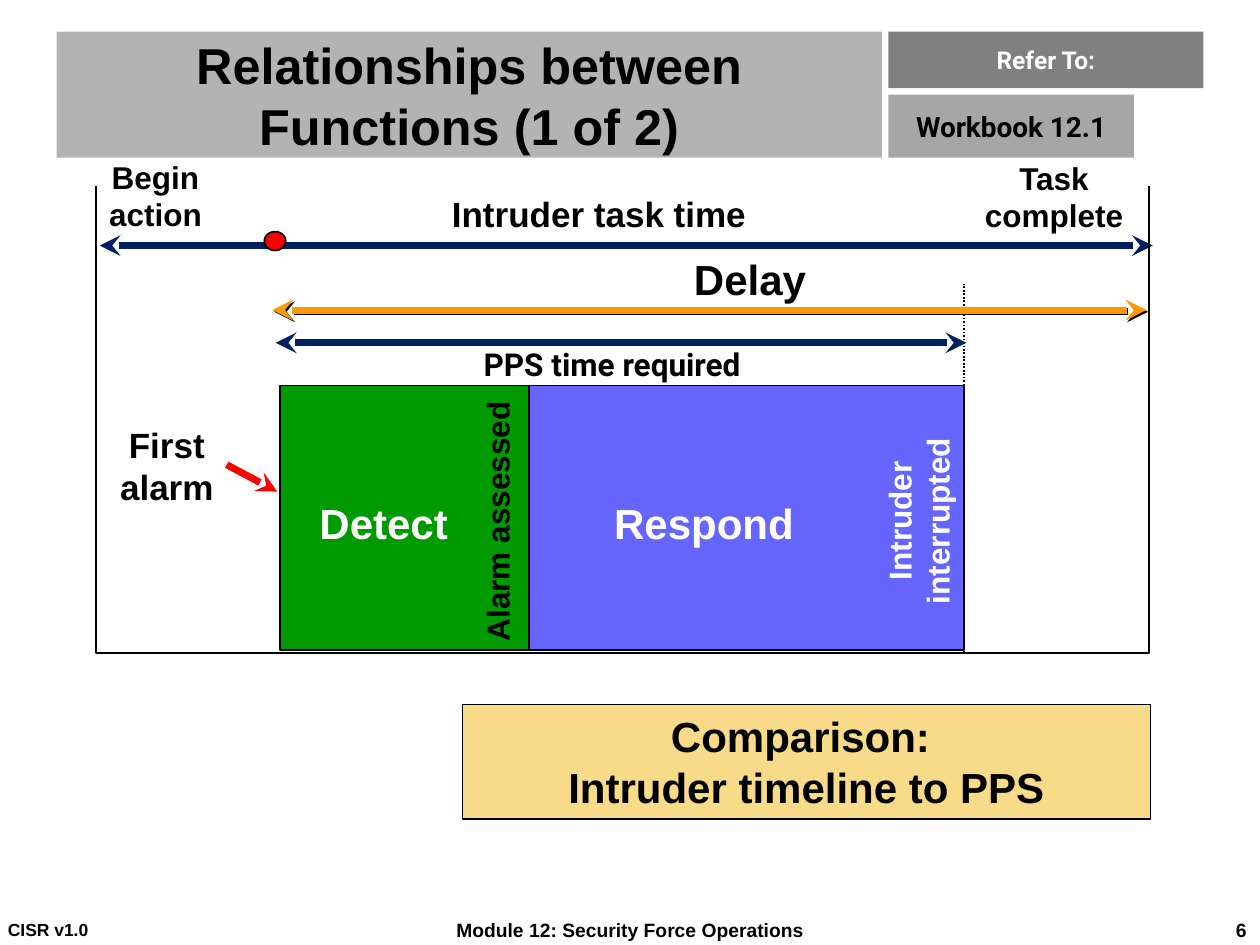
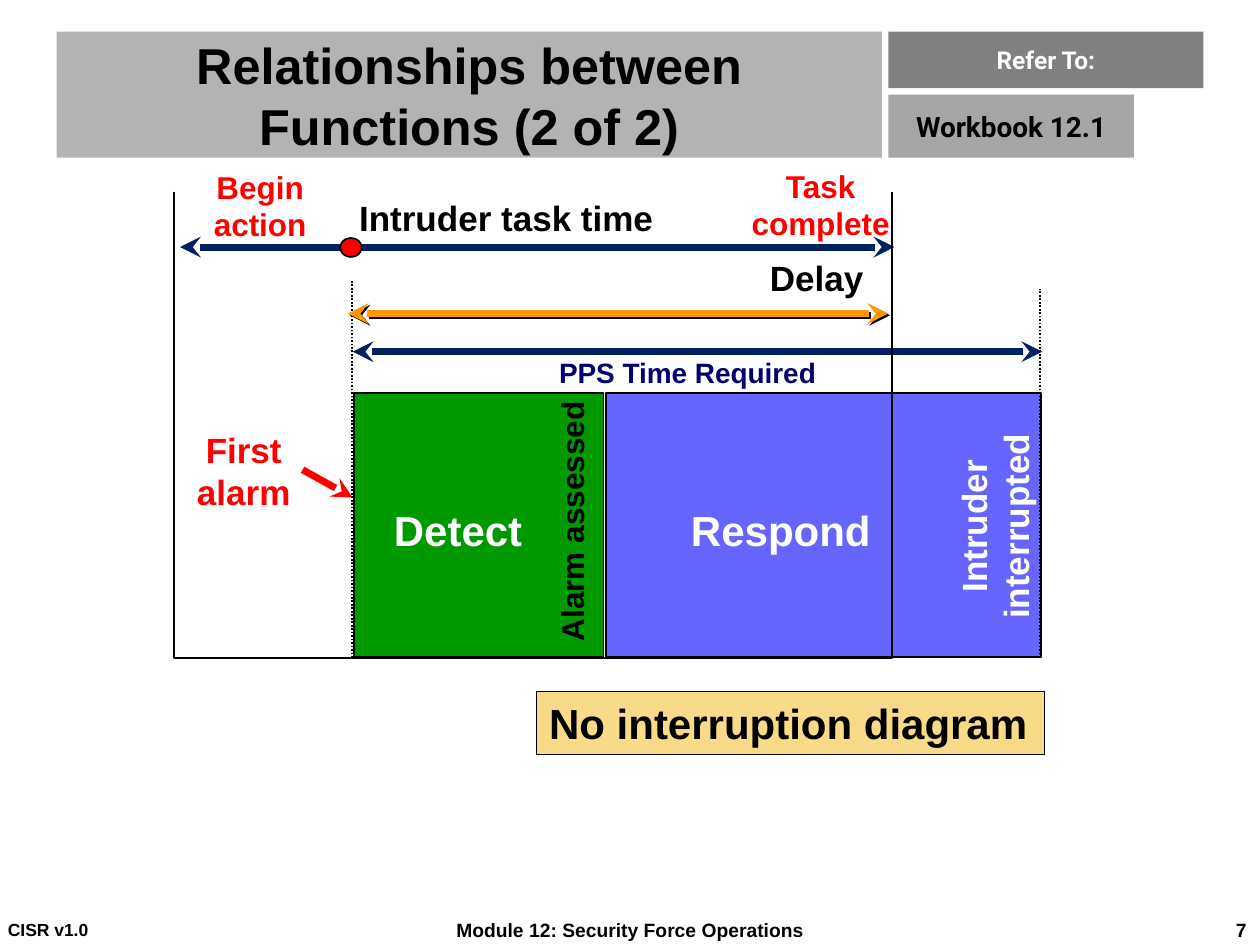
from lxml import etree
from pptx import Presentation
from pptx.dml.color import RGBColor
from pptx.enum.dml import MSO_LINE
from pptx.enum.shapes import MSO_CONNECTOR, MSO_SHAPE
from pptx.enum.text import MSO_ANCHOR, PP_ALIGN
from pptx.oxml.ns import qn
from pptx.util import Cm, Pt

BLACK, WHITE, RED = "000000", "FFFFFF", "FF0000"
NAVY, ORANGE, GREEN, BLUE, SAND = "002060", "FF9900", "009900", "6666FF", "F8DB88"
TITLE_GREY, WORKBOOK_GREY, REFER_GREY = "B3B3B3", "A6A6A6", "808080"

LEFT, CENTER, RIGHT = PP_ALIGN.LEFT, PP_ALIGN.CENTER, PP_ALIGN.RIGHT
THIN_MARGINS = (0.03, 0.03, 0.03, 0.03)
FOOTER_MARGINS = (0.25, 0.03, 0.25, 0.03)

TITLE = "Relationships between Functions ({} of 2)"
FOOTER_TOP, FOOTER_HEIGHT = 18.42, 0.64
DETECT_WIDTH, RESPOND_WIDTH, BLOCK_HEIGHT = 5.03, 8.76, 5.33

# All lengths are in centimetres. Arrows: (start, end, height on the slide).
# Labels: (text, left, top, width, height, format).
TIMELINES = [
    {
        "page": "6",
        "frame": (1.93, 3.76, 23.16, 13.16),
        "task": (2.01, 23.24, 4.95),
        "delay": (5.49, 23.11, 6.25),
        "pps": (5.56, 19.48, 6.91),
        "first_alarm_dot": (5.33, 4.67),
        "first_alarm_arrow": (4.57, 9.37, 5.59, 9.91),
        "detect_left": 5.64,
        "respond_left": 10.67,
        "block_top": 7.77,
        "dotted": [(19.43, 5.72)],
        "labels": [
            ("Begin\naction", 1.93, 3.05, 2.41, 1.8, {"align": CENTER}),
            ("Task\ncomplete", 19.13, 3.07, 4.24, 1.8, {"align": CENTER}),
            ("Intruder task time", 8.86, 3.76, 6.68, 1.12, {"size": 20}),
            ("First\nalarm", 2.16, 8.41, 2.41, 1.96, {"size": 20, "align": CENTER}),
            ("Intruder\ninterrupted", 16.56, 9.6, 3.91, 1.8,
             {"color": WHITE, "align": CENTER, "rotation": 270}),
            ("PPS time required", 9.5, 6.83, 5.99, 1.02, {"font": "Roboto"}),
            ("Delay", 13.74, 4.98, 2.79, 1.3, {"size": 24}),
            ("Comparison: \nIntruder timeline to PPS", 9.32, 14.2, 13.87, 2.31,
             {"size": 24, "align": CENTER, "fill": SAND, "line": BLACK}),
        ],
    },
    {
        "page": "7",
        "frame": (3.51, 3.87, 17.98, 13.26),
        "task": (3.63, 18.03, 4.98),
        "delay": (7.01, 17.91, 6.32),
        "pps": (7.11, 21.01, 7.09),
        "first_alarm_dot": (6.86, 4.8),
        "first_alarm_arrow": (6.1, 9.47, 7.11, 10.03),
        "detect_left": 7.14,
        "respond_left": 12.22,
        "block_top": 7.92,
        "dotted": [(7.09, 5.64), (20.96, 5.82)],
        "labels": [
            ("Begin\naction", 4.04, 3.25, 2.41, 1.8, {"color": RED, "align": CENTER}),
            ("Task\ncomplete", 14.88, 3.23, 3.33, 1.8, {"color": RED, "align": CENTER}),
            ("Intruder task time", 6.99, 3.84, 6.68, 1.12, {"size": 20}),
            ("First\nalarm", 3.71, 8.51, 2.41, 1.96,
             {"size": 20, "color": RED, "align": CENTER}),
            ("Intruder\ninterrupted", 17.91, 9.63, 4.27, 1.96,
             {"size": 20, "color": WHITE, "align": CENTER, "rotation": 270}),
            ("PPS Time Required", 11.02, 7.04, 5.77, 0.94, {"size": 16, "color": "000072"}),
            ("Delay", 15.27, 5.05, 2.41, 1.12, {"size": 20}),
            ("No interruption diagram", 10.82, 13.94, 10.24, 1.27,
             {"size": 24, "fill": SAND, "line": BLACK}),
        ],
    },
]


def rgb(color):
    return RGBColor.from_string(color)


def add_block(slide, left, top, width, height, fill=None, line=None, line_width=1.0,
              preset=MSO_SHAPE.RECTANGLE):
    shape = slide.shapes.add_shape(preset, Cm(left), Cm(top), Cm(width), Cm(height))
    shape.shadow.inherit = False
    if fill:
        shape.fill.solid()
        shape.fill.fore_color.rgb = rgb(fill)
    else:
        shape.fill.background()
    if line:
        shape.line.color.rgb = rgb(line)
        shape.line.width = Pt(line_width)
    else:
        shape.line.fill.background()
    return shape


def add_text(slide, text, left, top, width, height, size=18, font="Arial", color=BLACK,
             align=LEFT, anchor=MSO_ANCHOR.TOP, margins=(0.25, 0.13, 0.25, 0.13),
             wrap=False, rotation=0, fill=None, line=None, space_after=0):
    """Write bold text, one paragraph per line, in a box that may have a fill and line."""
    if fill:
        shape = add_block(slide, left, top, width, height, fill, line, line_width=0.75)
    else:
        shape = slide.shapes.add_textbox(Cm(left), Cm(top), Cm(width), Cm(height))
    shape.rotation = rotation
    frame = shape.text_frame
    frame.word_wrap = wrap
    frame.vertical_anchor = anchor
    (frame.margin_left, frame.margin_top,
     frame.margin_right, frame.margin_bottom) = map(Cm, margins)
    frame.text = text
    for paragraph in frame.paragraphs:
        paragraph.alignment = align
        paragraph.space_after = Pt(space_after)
        paragraph.font.name = font
        paragraph.font.size = Pt(size)
        paragraph.font.bold = True
        paragraph.font.color.rgb = rgb(color)


def add_line(slide, x1, y1, x2, y2, color=BLACK, width=1, ends=(), dotted=False,
             shadow=False):
    """Draw a connector; ends lists its arrowheads, headEnd before tailEnd."""
    connector = slide.shapes.add_connector(
        MSO_CONNECTOR.STRAIGHT, Cm(x1), Cm(y1), Cm(x2), Cm(y2))
    connector.line.color.rgb = rgb(color)
    connector.line.width = Pt(width)
    if dotted:
        connector.line.dash_style = MSO_LINE.ROUND_DOT
    properties = connector._element.spPr
    outline = properties.find(qn("a:ln"))
    for end in ends:
        etree.SubElement(outline, qn(f"a:{end}"), type="stealth")
    effects = etree.SubElement(properties, qn("a:effectLst"))
    if shadow:
        outer = etree.SubElement(effects, qn("a:outerShdw"), dist=str(Pt(1.4)),
                                 dir="2700000", algn="ctr", rotWithShape="0")
        etree.SubElement(outer, qn("a:srgbClr"), val=BLACK)


def add_span(slide, span, color, shadow=False):
    """Draw a thick horizontal double arrow."""
    start, end, y = span
    add_line(slide, start, y, end, y, color, 4, ("headEnd", "tailEnd"), shadow=shadow)


def add_frame(slide, left, top, right, bottom):
    """Draw the open-topped outline of the timeline."""
    builder = slide.shapes.build_freeform(Cm(left), Cm(top))
    builder.add_line_segments(
        [(Cm(left), Cm(bottom)), (Cm(right), Cm(bottom)), (Cm(right), Cm(top))], close=False)
    outline = builder.convert_to_shape()
    outline.shadow.inherit = False
    outline.fill.background()
    outline.line.color.rgb = rgb(BLACK)
    outline.line.width = Pt(1)


def add_header_and_footer(slide, number, page):
    centered = {"align": CENTER, "anchor": MSO_ANCHOR.MIDDLE}
    reference = {**centered, "font": "Roboto", "margins": THIN_MARGINS}
    add_text(slide, TITLE.format(number), 1.14, 0.64, 16.64, 2.54, size=28.8,
             fill=TITLE_GREY, wrap=True, **centered)
    add_text(slide, "Workbook 12.1", 17.91, 1.91, 4.95, 1.27, size=16,
             fill=WORKBOOK_GREY, **reference)
    add_text(slide, "Refer To:", 17.91, 0.64, 6.35, 1.14, size=14, color=WHITE,
             fill=REFER_GREY, space_after=2, **reference)
    for text, left, width, size, align, margins in (
        ("CISR v1.0", 0.13, 7.87, 10, LEFT, THIN_MARGINS),
        ("Module 12: Security Force Operations", 8.26, 8.89, 11, CENTER, FOOTER_MARGINS),
        (page, 24.26, 1.12, 11, RIGHT, FOOTER_MARGINS),
    ):
        add_text(slide, text, left, FOOTER_TOP, width, FOOTER_HEIGHT, size=size,
                 align=align, anchor=MSO_ANCHOR.MIDDLE, margins=margins)


def add_timeline(slide, timeline):
    detect_left, respond_left = timeline["detect_left"], timeline["respond_left"]
    block_top = timeline["block_top"]
    frame_bottom = timeline["frame"][3]
    block_text = {"size": 24, "color": WHITE}

    add_span(slide, timeline["task"], NAVY)
    add_block(slide, *timeline["first_alarm_dot"], 0.43, 0.38, RED, BLACK,
              preset=MSO_SHAPE.OVAL)
    add_line(slide, *timeline["first_alarm_arrow"], RED, 4, ("tailEnd",))

    add_block(slide, detect_left, block_top, DETECT_WIDTH, BLOCK_HEIGHT, GREEN, BLACK)
    add_text(slide, "Detect", detect_left + 0.55, block_top + 2.12, 3.12, 1.3, **block_text)
    add_text(slide, "Alarm assessed", detect_left + 1.69, 9.98, 5.38, 1.02, rotation=270)
    add_block(slide, respond_left, block_top, RESPOND_WIDTH, BLOCK_HEIGHT, BLUE, BLACK)
    add_text(slide, "Respond", respond_left + 1.46, block_top + 2.12, 4.17, 1.3, **block_text)

    for x, top in timeline["dotted"]:
        add_line(slide, x, frame_bottom, x, top, dotted=True)
    add_span(slide, timeline["pps"], NAVY)
    add_span(slide, timeline["delay"], ORANGE, shadow=True)
    for text, left, top, width, height, text_format in timeline["labels"]:
        add_text(slide, text, left, top, width, height, **text_format)
    add_frame(slide, *timeline["frame"])


def main():
    presentation = Presentation()
    presentation.slide_width, presentation.slide_height = Cm(25.4), Cm(19.05)
    blank_layout = presentation.slide_layouts[6]
    for number, timeline in enumerate(TIMELINES, start=1):
        slide = presentation.slides.add_slide(blank_layout)
        add_header_and_footer(slide, number, timeline["page"])
        add_timeline(slide, timeline)
    presentation.save("out.pptx")


if __name__ == "__main__":
    main()
